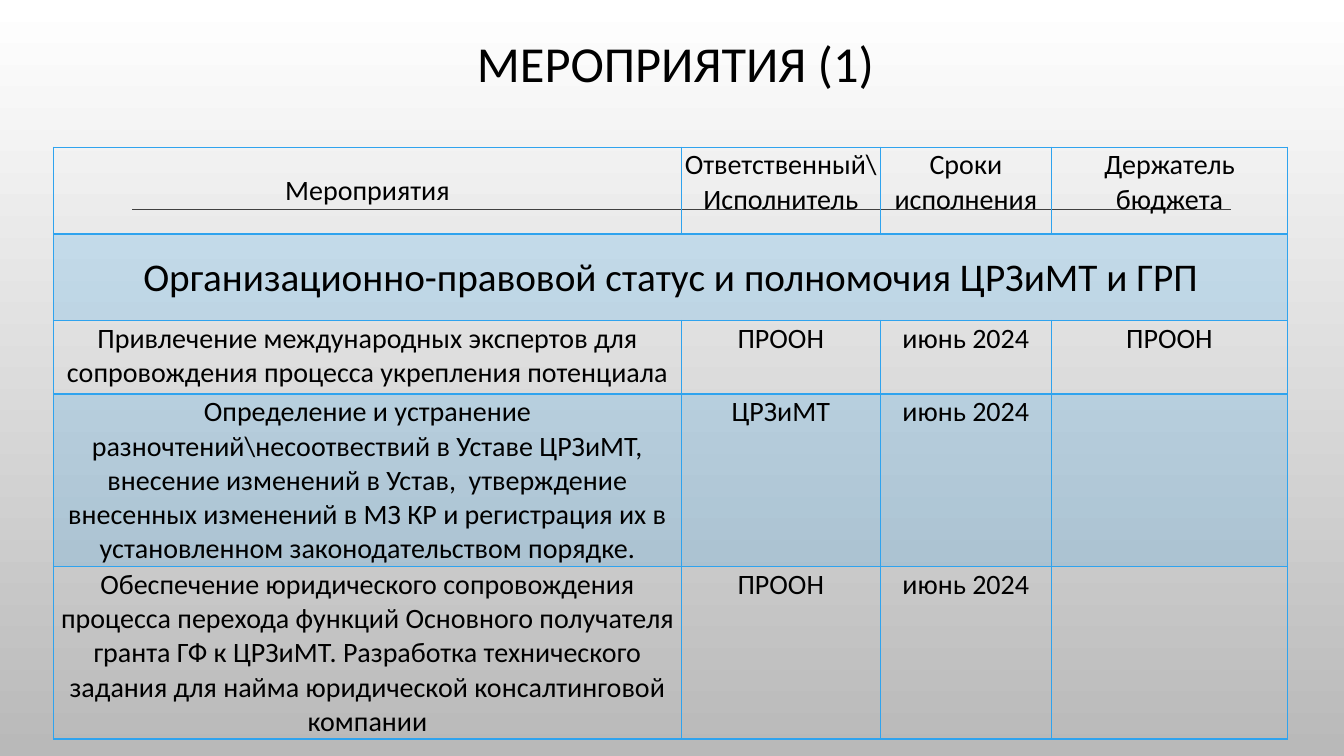
import pptx
import pptx.util
from lxml import etree
from pptx.dml.color import RGBColor
from pptx.enum.shapes import MSO_CONNECTOR
from pptx.enum.text import MSO_ANCHOR, PP_ALIGN
from pptx.oxml.ns import qn
from pptx.util import Inches, Pt

BLACK = RGBColor(0x00, 0x00, 0x00)
WHITE = RGBColor(0xFF, 0xFF, 0xFF)
GREY = RGBColor(0xB9, 0xB9, 0xB9)
DARK = RGBColor(0x40, 0x40, 0x40)
BLUE = RGBColor(0x2F, 0xA3, 0xEE)

COLUMN_WIDTHS = [6.23, 1.97, 1.7, 2.34]
ROW_HEIGHTS = [0.86, 0.86, 0.73, 1.71, 1.71]
HEADER_ROW, SECTION_ROW = 0, 1
BANDED_ROWS = (1, 3)
FIRST_COLUMN_ANCHORS = [MSO_ANCHOR.MIDDLE, MSO_ANCHOR.MIDDLE, MSO_ANCHOR.TOP,
                        MSO_ANCHOR.BOTTOM, MSO_ANCHOR.BOTTOM]
ACTIVITIES = [
    ["Мероприятия", "Ответственный\\Исполнитель", "Сроки исполнения",
     "Держатель бюджета"],
    ["Организационно-правовой статус и полномочия ЦРЗиМТ и ГРП", "", "", ""],
    ["Привлечение международных экспертов для сопровождения процесса "
     "укрепления потенциала", "ПРООН", "июнь 2024", "ПРООН"],
    ["Определение и устранение разночтений\\несоотвествий в Уставе ЦРЗиМТ, "
     "внесение изменений в Устав,  утверждение внесенных изменений в МЗ КР "
     "и регистрация их в установленном законодательством порядке.",
     "ЦРЗиМТ", "июнь 2024", ""],
    ["Обеспечение юридического сопровождения процесса перехода функций "
     "Основного получателя гранта ГФ к ЦРЗиМТ. Разработка технического "
     "задания для найма юридической консалтинговой компании",
     "ПРООН", "июнь 2024", ""],
]


class SlideBuilder:
    font_name = "Calibri"

    def __init__(self, presentation):
        self.slide = presentation.slides.add_slide(presentation.slide_layouts[5])

    def background(self, top_color, bottom_color):
        fill = self.slide.background.fill
        fill.gradient()
        fill.gradient_angle = 270
        for stop, position, color in zip(fill.gradient_stops, (0, 1),
                                         (top_color, bottom_color)):
            stop.position = position
            stop.color.rgb = color

    def format_text(self, text_frame, size):
        for paragraph in text_frame.paragraphs:
            paragraph.alignment = PP_ALIGN.CENTER
            for run in paragraph.runs:
                run.font.name = self.font_name
                run.font.size = Pt(size)
                run.font.color.rgb = BLACK

    def title(self, text, left, top, width, height, size):
        title = self.slide.shapes.title
        title.left, title.top = Inches(left), Inches(top)
        title.width, title.height = Inches(width), Inches(height)
        title.text_frame.text = text
        title.text_frame.vertical_anchor = MSO_ANCHOR.MIDDLE
        title.text_frame.paragraphs[0].line_spacing = 0.9
        self.format_text(title.text_frame, size)

    def line(self, left, right, y, color, width):
        connector = self.slide.shapes.add_connector(
            MSO_CONNECTOR.STRAIGHT, Inches(left), Inches(y), Inches(right), Inches(y))
        connector.line.color.rgb = color
        connector.line.width = Pt(width)
        etree.SubElement(connector._element.spPr, qn("a:effectLst"))

    def cell_borders(self, cell, color, widths):
        properties = cell._tc.get_or_add_tcPr()
        for side, width in widths.items():
            border = etree.SubElement(properties, qn(f"a:ln{side}"), w=str(Pt(width)))
            fill = etree.SubElement(border, qn("a:solidFill"))
            etree.SubElement(fill, qn("a:srgbClr"), val=str(color))

    def cell_fill(self, cell, color, opacity):
        if not opacity:
            cell.fill.background()
            return
        cell.fill.solid()
        cell.fill.fore_color.rgb = color
        color_element = cell._tc.tcPr.find(qn("a:solidFill")).find(qn("a:srgbClr"))
        etree.SubElement(color_element, qn("a:alpha"), val=str(opacity * 1000))

    def table(self, rows, left, top):
        table = self.slide.shapes.add_table(
            len(rows), len(COLUMN_WIDTHS), Inches(left), Inches(top),
            Inches(sum(COLUMN_WIDTHS)), Inches(sum(ROW_HEIGHTS))).table
        table.first_row = table.horz_banding = False
        for column, width in zip(table.columns, COLUMN_WIDTHS):
            column.width = Inches(width)
        for row, height in zip(table.rows, ROW_HEIGHTS):
            row.height = Inches(height)

        for row_index, texts in enumerate(rows):
            borders = {"L": 1, "R": 1,
                       "T": 2 if row_index == SECTION_ROW else 1,
                       "B": 2 if row_index == HEADER_ROW else 1}
            for column_index, text in enumerate(texts):
                cell = table.cell(row_index, column_index)
                cell.margin_left = cell.margin_right = cell.margin_top = Inches(0.01)
                cell.margin_bottom = 0
                cell.vertical_anchor = (FIRST_COLUMN_ANCHORS[row_index]
                                        if column_index == 0 else MSO_ANCHOR.TOP)
                self.cell_borders(cell, BLUE, borders)
                self.cell_fill(cell, BLUE, 20 if row_index in BANDED_ROWS else 0)
                if text:
                    cell.text_frame.text = text
                    self.format_text(cell.text_frame,
                                     28 if row_index == SECTION_ROW else 20)
        table.cell(SECTION_ROW, 0).merge(table.cell(SECTION_ROW, len(COLUMN_WIDTHS) - 1))


def main():
    presentation = pptx.Presentation()
    presentation.slide_width = Inches(13.33)
    presentation.slide_height = Inches(7.5)
    builder = SlideBuilder(presentation)

    # Background, title and rule
    builder.background(WHITE, GREY)
    builder.title("МЕРОПРИЯТИЯ (1)", 1.2, 0.31, 11, 0.7, 36)
    builder.line(1.31, 12.21, 2.08, DARK, 1)

    # Table of activities
    builder.table(ACTIVITIES, 0.53, 1.46)

    presentation.save("out.pptx")


if __name__ == "__main__":
    main()
